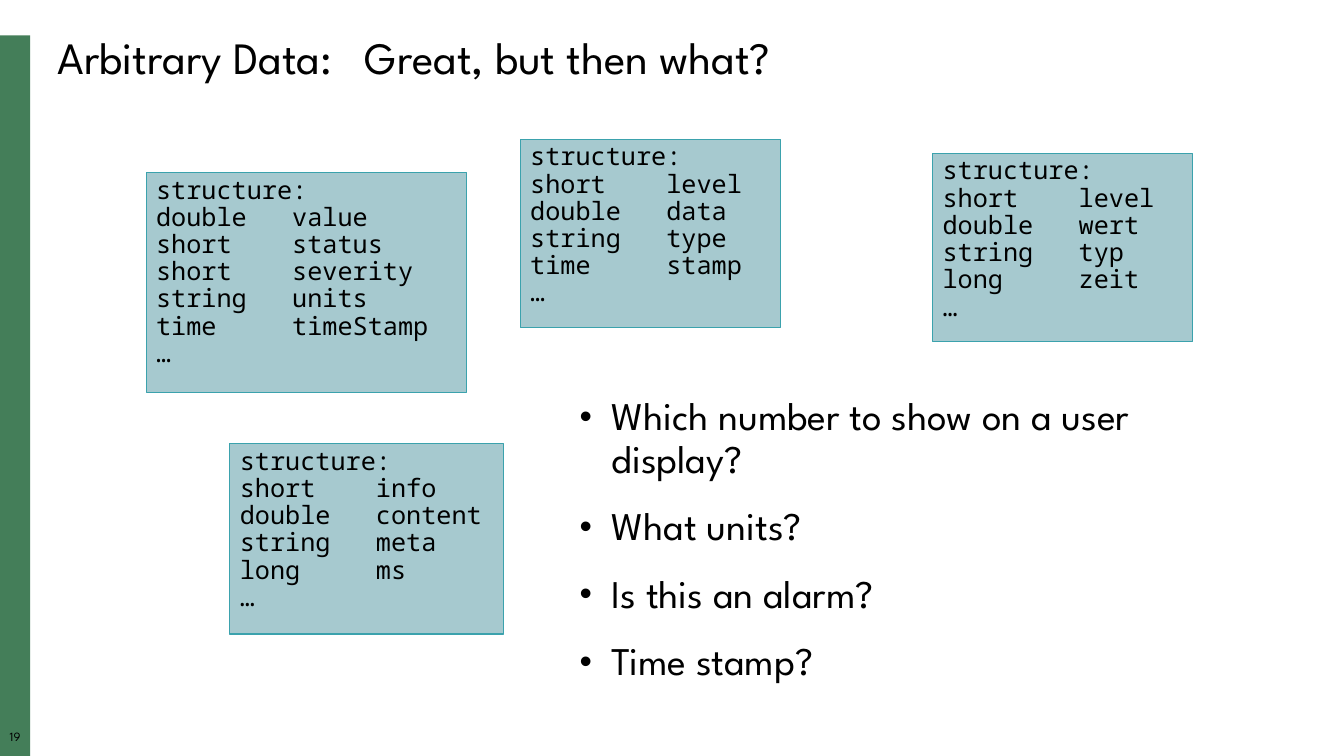
from lxml import etree
from pptx import Presentation
from pptx.dml import color
from pptx.enum import shapes, text
from pptx.oxml import ns
from pptx.util import Inches, Pt

SANS = "League Spartan"
MONO = "Noto Sans Mono"
STRUCTURES = [
    ((1.45, 1.71, 3.18, 2.18), [
        ("double", "value"), ("short", "status"), ("short", "severity"),
        ("string", "units"), ("time", "timeStamp")]),
    ((5.16, 1.38, 2.58, 1.87), [
        ("short", "level"), ("double", "data"), ("string", "type"), ("time", "stamp")]),
    ((2.28, 4.4, 2.71, 1.89), [
        ("short", "info"), ("double", "content"), ("string", "meta"), ("long", "ms")]),
    ((9.25, 1.52, 2.58, 1.87), [
        ("short", "level"), ("double", "wert"), ("string", "typ"), ("long", "zeit")]),
]
QUESTIONS = [
    "Which number to show on a user display?",
    "What units?",
    "Is this an alarm?",
    "Time stamp?",
]


def rgb(value):
    return color.RGBColor.from_string(value)


def inches(box):
    return [Inches(length) for length in box]


def add_element(parent, tag, **attributes):
    element = etree.SubElement(parent, ns.qn(tag))
    for key, value in attributes.items():
        element.set(key, str(value))
    return element


def add_bullet(properties):
    properties.set("marL", str(Inches(0.32)))
    properties.set("indent", str(-Inches(0.32)))
    add_element(add_element(properties, "a:buClr"), "a:srgbClr", val="000000")
    add_element(properties, "a:buSzPct", val=90000)
    add_element(properties, "a:buFont", typeface="Arial")
    add_element(properties, "a:buChar", char="•")


def write(frame, lines, size=18, font=SANS, align=text.PP_ALIGN.LEFT,
          anchor=text.MSO_ANCHOR.TOP, margins=(0.1, 0.05), before=0,
          bullet=False, tab=None):
    frame.word_wrap = True
    frame.auto_size = text.MSO_AUTO_SIZE.NONE
    frame.vertical_anchor = anchor
    frame.margin_left = frame.margin_right = Inches(margins[0])
    frame.margin_top = frame.margin_bottom = Inches(margins[1])
    for index, line in enumerate(lines):
        paragraph = frame.add_paragraph() if index else frame.paragraphs[0]
        paragraph.text = line
        properties = paragraph._p.get_or_add_pPr()
        if bullet:
            add_bullet(properties)
        if tab:
            stops = add_element(properties, "a:tabLst")
            add_element(stops, "a:tab", pos=Inches(tab), algn="l")
        paragraph.alignment = align
        paragraph.line_spacing = 0.9
        paragraph.space_before = Pt(before if index else 0)
        for run in paragraph.runs:
            run.font.size = Pt(size)
            run.font.name = font
            run.font.color.rgb = rgb("000000")


def add_box(slide, box, fill, line=None):
    panel = slide.shapes.add_shape(shapes.MSO_SHAPE.RECTANGLE, *inches(box))
    panel.shadow.inherit = False
    panel.fill.solid()
    panel.fill.fore_color.rgb = rgb(fill)
    if line:
        panel.line.color.rgb = rgb(line)
        panel.line.width = Pt(0.75)
    else:
        panel.line.fill.background()
    return panel


def add_sidebar(slide, box, number):
    left, top, width, height = box
    add_box(slide, box, "447E59")
    page = slide.shapes.add_textbox(*inches((left, top + height - 0.25, width, 0.17)))
    write(page.text_frame, [number], size=9, align=text.PP_ALIGN.CENTER, margins=(0, 0))


def add_title(slide, box, wording):
    title = slide.shapes.title
    title.left, title.top, title.width, title.height = inches(box)
    write(title.text_frame, [wording], size=32, anchor=text.MSO_ANCHOR.MIDDLE, tab=3.05)


def add_structure(slide, box, fields):
    panel = add_box(slide, box, "A6C9CF", "3BA2AD")
    rows = ["structure:", *("\t".join(field) for field in fields), "…"]
    write(panel.text_frame, ["\v".join(rows)], font=MONO, tab=1.35)


def add_questions(slide, box, questions):
    body = slide.shapes.add_textbox(*inches(box))
    write(body.text_frame, questions, size=28, before=18, bullet=True)


def main():
    deck = Presentation()
    deck.slide_width, deck.slide_height = Inches(13.33), Inches(7.5)
    slide = deck.slides.add_slide(deck.slide_layouts[5])
    add_sidebar(slide, (0, 0.35, 0.3, 7.15), "19")
    add_title(slide, (0.47, 0.3, 12.5, 0.59), "Arbitrary Data:\tGreat, but then what?")
    for box, fields in STRUCTURES:
        add_structure(slide, box, fields)
    add_questions(slide, (5.65, 3.89, 6.53, 3.1), QUESTIONS)
    deck.save("out.pptx")


if __name__ == "__main__":
    main()
